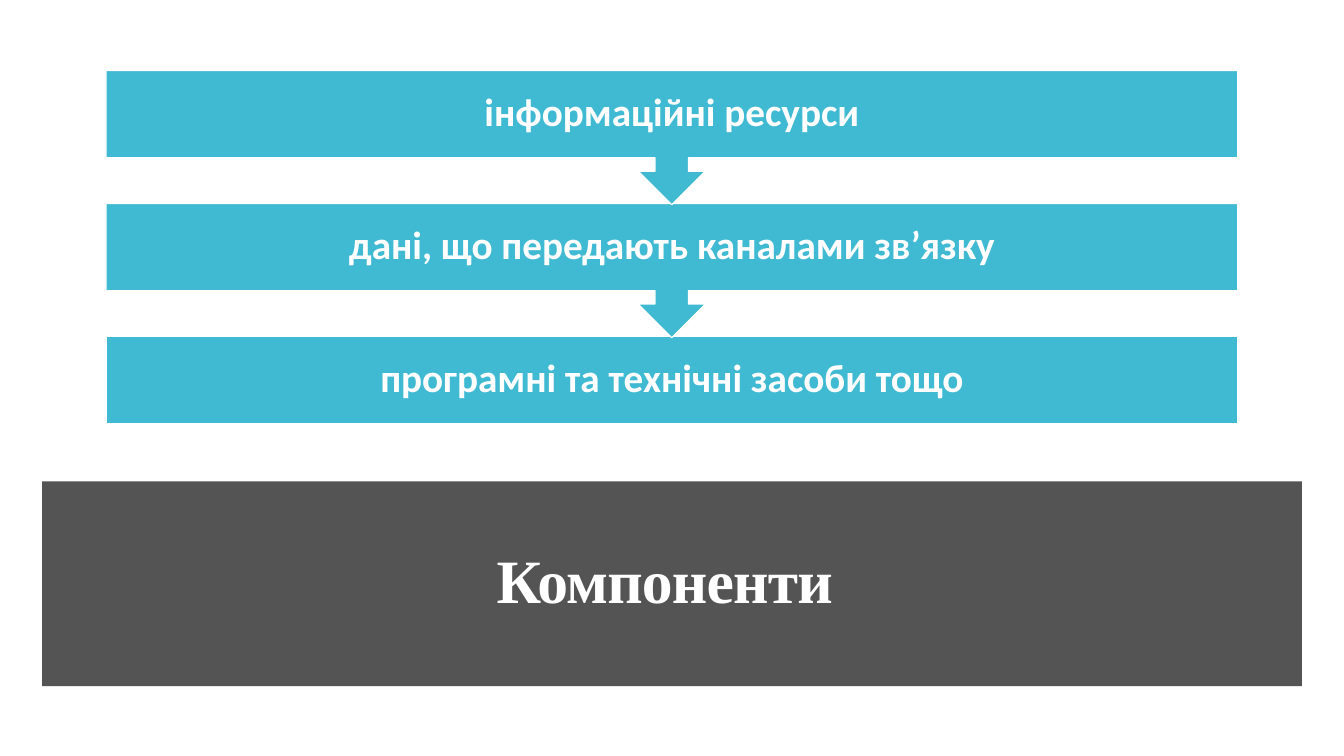
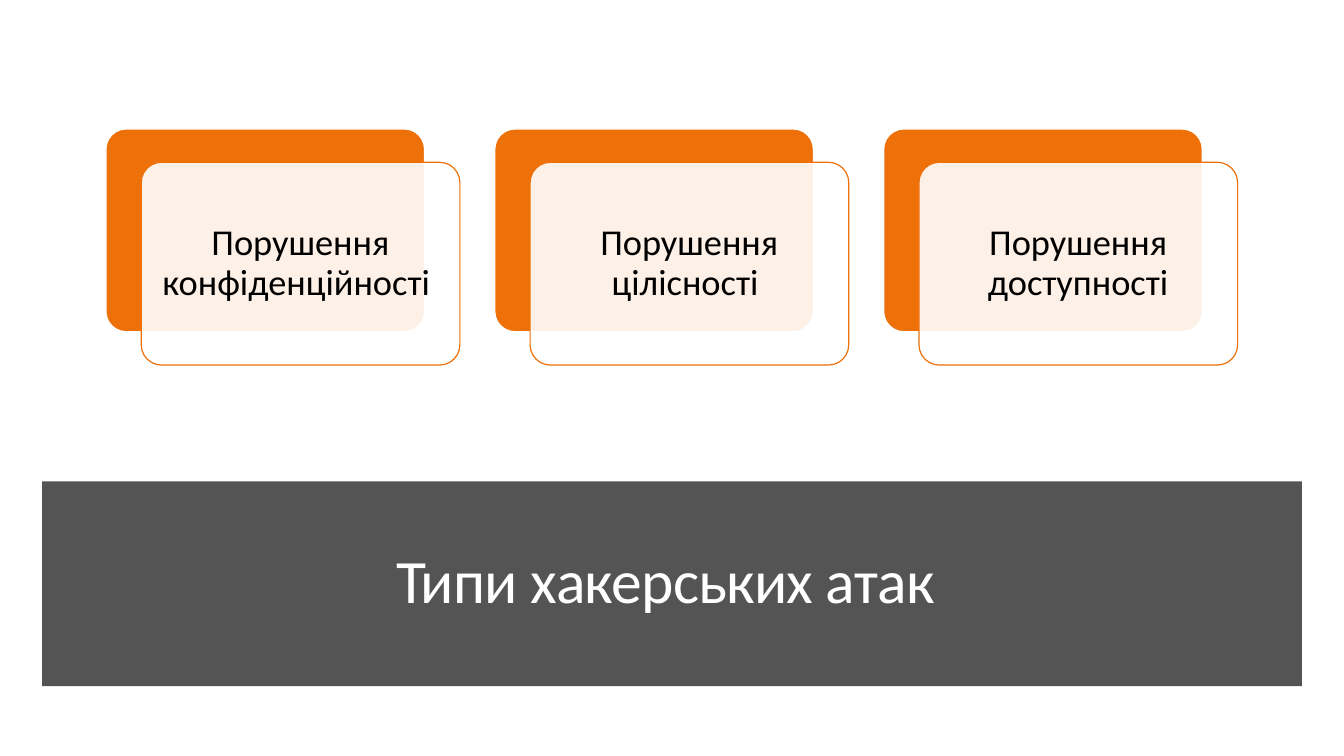
from dataclasses import dataclass

from lxml.etree import SubElement
from pptx import Presentation
from pptx.dml.color import RGBColor
from pptx.enum.shapes import MSO_SHAPE as Shape
from pptx.enum.text import MSO_ANCHOR as Anchor, PP_ALIGN as Align
from pptx.oxml.ns import qn
from pptx.util import Cm, Pt

# Content
STEPS_TITLE = "Компоненти "
STEPS = [
    "інформаційні ресурси",
    "дані, що передають каналами зв’язку",
    "програмні та технічні засоби тощо",
]
ATTACKS_TITLE = "Типи хакерських атак "
ATTACKS = [
    "Порушення конфіденційності ",
    "Порушення цілісності ",
    "Порушення доступності",
]


@dataclass(frozen=True)
class Theme:
    white: str = "FFFFFF"
    black: str = "000000"
    band: str = "545454"
    step: str = "40BAD2"
    card: str = "EE7008"
    font: str = "Calibri"
    serif: str = "Times New Roman"
    title_size: int = 44
    step_size: int = 28
    card_size: int = 26
    outline: float = 0.85


T = Theme()
TITLE = {"size": Pt(T.title_size), "name": T.font, "bold": False}
SERIF_TITLE = TITLE | {"name": T.serif, "bold": True}
STEP_TEXT = {"size": Pt(T.step_size), "name": T.font, "bold": True}
CARD_TEXT = {"size": Pt(T.card_size), "name": T.font}

# Layout, in centimetres
SLIDE_W, SLIDE_H = 33.87, 19.05
BAND = (1.06, 12.13, 31.75, 5.16)
LEFT, CONTENT_W = 2.67, 28.52
STEP_TOP, STEP_PITCH, STEP_H, CALLOUT_H = 1.78, 3.35, 2.2, 3.38
CARD_TOP, CARD_W, CARD_H, CARD_ROUND = 3.25, 8.03, 5.11, 0.1
SHIFT_X, SHIFT_Y = 0.89, 0.84


# Helpers
def add_box(s, kind, box, fill, line=None, alpha=None):
    sp = s.shapes.add_shape(kind, *map(Cm, box))
    sp.shadow.inherit = False
    sp.fill.solid()
    sp.fill.fore_color.rgb = RGBColor.from_string(fill)
    if alpha is not None:
        color = sp.fill._xPr.find(qn("a:solidFill"))[0]
        SubElement(color, qn("a:alpha"), val=str(alpha * 1000))
    if line:
        sp.line.color.rgb = RGBColor.from_string(line)
        sp.line.width = Pt(T.outline)
    else:
        sp.line.fill.background()
    return sp


def write(sp, text, fmt, color, inset=0.28, spacing=None):
    tf = sp.text_frame
    frame = {"word_wrap": True, "vertical_anchor": Anchor.MIDDLE,
             "margin_left": Cm(inset), "margin_right": Cm(inset),
             "margin_top": 0, "margin_bottom": 0}
    for key, value in frame.items():
        setattr(tf, key, value)
    p = tf.paragraphs[0]
    p.alignment, p.line_spacing = Align.CENTER, 0.9
    r = p.add_run()
    r.text = text
    for key, value in fmt.items():
        setattr(r.font, key, value)
    r.font.color.rgb = RGBColor.from_string(color)
    if spacing is not None:
        r._r.get_or_add_rPr().set("spc", str(spacing))


def add_titled_slide(prs, title, fmt):
    s = prs.slides.add_slide(prs.slide_layouts[6])
    band = add_box(s, Shape.RECTANGLE, BAND, T.band)
    write(band, title, fmt, T.white, spacing=-60)
    return s


# Slides
def build_steps(prs):
    s = add_titled_slide(prs, STEPS_TITLE, SERIF_TITLE)
    for i, text in reversed(list(enumerate(STEPS))):
        last = i == len(STEPS) - 1
        kind = Shape.RECTANGLE if last else Shape.DOWN_ARROW_CALLOUT
        box = (LEFT, STEP_TOP + i * STEP_PITCH, CONTENT_W,
               STEP_H if last else CALLOUT_H)
        sp = add_box(s, kind, box, T.step, T.white)
        write(sp, text, STEP_TEXT, T.white, inset=0.56)


def build_attacks(prs):
    s = add_titled_slide(prs, ATTACKS_TITLE, TITLE)
    pitch = (CONTENT_W - CARD_W - SHIFT_X) / (len(ATTACKS) - 1)
    for i, text in enumerate(ATTACKS):
        x = LEFT + i * pitch
        back = add_box(s, Shape.ROUNDED_RECTANGLE,
                       (x, CARD_TOP, CARD_W, CARD_H), T.card, T.white)
        front = add_box(s, Shape.ROUNDED_RECTANGLE,
                        (x + SHIFT_X, CARD_TOP + SHIFT_Y, CARD_W, CARD_H),
                        T.white, T.card, alpha=90)
        for sp in (back, front):
            sp.adjustments[0] = CARD_ROUND
        write(front, text, CARD_TEXT, T.black)


def main():
    prs = Presentation()
    prs.slide_width, prs.slide_height = Cm(SLIDE_W), Cm(SLIDE_H)
    build_steps(prs)
    build_attacks(prs)
    prs.save("out.pptx")


if __name__ == "__main__":
    main()
